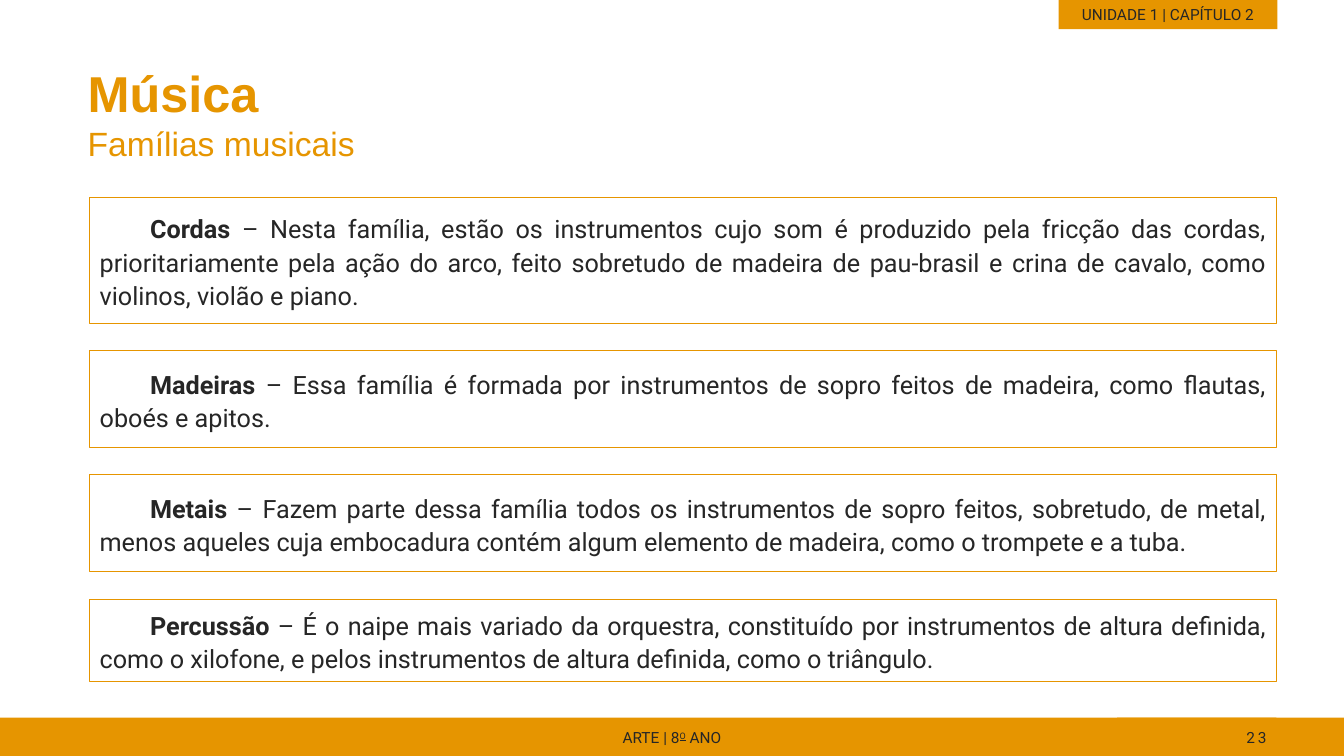
from dataclasses import dataclass

from pptx import Presentation
from pptx.dml.color import RGBColor
from pptx.enum.shapes import MSO_SHAPE
from pptx.enum.text import MSO_ANCHOR as Anchor, PP_ALIGN as Align
from pptx.util import Inches, Pt


@dataclass(frozen=True)
class Theme:
    """Colours, fonts and type sizes of the slide."""
    accent: RGBColor = RGBColor(0xE6, 0x95, 0x00)
    ink: RGBColor = RGBColor(0x26, 0x26, 0x26)
    heading_font: str = "Arial"
    body_font: str = "Roboto"
    title: Pt = Pt(36)
    subtitle: Pt = Pt(24)
    body: Pt = Pt(18)
    label: Pt = Pt(11)
    outline: Pt = Pt(0.75)


THEME = Theme()
LABEL = {"name": THEME.body_font, "size": THEME.label}
BODY = {"name": THEME.body_font, "size": THEME.body}
CARD_LEFT, CARD_WIDTH = 0.89, 11.77

FAMILIES = [
    (1.96, 1.25, "Cordas", "Nesta família, estão os instrumentos cujo som é produzido pela "
     "fricção das cordas, prioritariamente pela ação do arco, feito sobretudo de madeira de "
     "pau-brasil e crina de cavalo, como violinos, violão e piano."),
    (3.48, 0.96, "Madeiras", "Essa família é formada por instrumentos de sopro feitos de "
     "madeira, como flautas, oboés e apitos."),
    (4.71, 0.96, "Metais", "Fazem parte dessa família todos os instrumentos de sopro feitos, "
     "sobretudo, de metal, menos aqueles cuja embocadura contém algum elemento de madeira, "
     "como o trompete e a tuba."),
    (5.95, 0.81, "Percussão", "É o naipe mais variado da orquestra, constituído por "
     "instrumentos de altura definida, como o xilofone, e pelos instrumentos de altura "
     "definida, como o triângulo."),
]


def add_run(paragraph, text, color=THEME.ink, **formats):
    """Append a run with the given font attributes."""
    run = paragraph.add_run()
    run.text = text
    run.font.color.rgb = color
    for name, value in formats.items():
        setattr(run.font, name, value)
    return run


def add_title(slide, title, subtitle):
    """Add the heading with its subtitle on the next line."""
    box = slide.shapes.add_textbox(Inches(0.77), Inches(0.3), Inches(11.05), Inches(1.37))
    frame = box.text_frame
    frame.word_wrap = True
    frame.vertical_anchor = Anchor.BOTTOM
    paragraph = frame.paragraphs[0]
    style = {"name": THEME.heading_font, "color": THEME.accent}
    add_run(paragraph, title, size=THEME.title, bold=True, **style)
    paragraph.add_line_break()
    add_run(paragraph, subtitle, size=THEME.subtitle, bold=False, **style)


def add_box(slide, bounds, align, anchor=Anchor.MIDDLE):
    """Add a plain rectangle and return it with its paragraph."""
    shape = slide.shapes.add_shape(MSO_SHAPE.RECTANGLE, *map(Inches, bounds))
    shape.shadow.inherit = False
    shape.text_frame.word_wrap = True
    shape.text_frame.vertical_anchor = anchor
    paragraph = shape.text_frame.paragraphs[0]
    paragraph.alignment = align
    return shape, paragraph


def add_band(slide, bounds, align=Align.CENTER, anchor=Anchor.MIDDLE):
    """Add a filled band without outline and return its paragraph."""
    shape, paragraph = add_box(slide, bounds, align, anchor)
    shape.fill.solid()
    shape.fill.fore_color.rgb = THEME.accent
    shape.line.fill.background()
    return paragraph


def add_family(slide, top, height, name, description):
    """Add an outlined card describing one family of instruments."""
    shape, paragraph = add_box(slide, (CARD_LEFT, top, CARD_WIDTH, height), Align.JUSTIFY)
    shape.fill.background()
    shape.line.color.rgb = THEME.accent
    shape.line.width = THEME.outline
    paragraph.line_spacing = 1.1
    properties = paragraph._p.get_or_add_pPr()
    properties.set("marL", "0")
    properties.set("indent", str(Inches(0.5)))
    add_run(paragraph, name, bold=True, **BODY)
    add_run(paragraph, f" – {description}", bold=False, **BODY)


def add_footer(slide):
    """Add the footer band with the school year and the page number."""
    footer = add_band(slide, (0, 7.12, 13.33, 0.4))
    add_run(footer, "ARTE | 8", **LABEL)
    ordinal = add_run(footer, "O", underline=True, **LABEL)
    ordinal.font._element.set("baseline", "30000")
    add_run(footer, " ANO", **LABEL)
    number = add_run(add_band(slide, (11.08, 7.12, 1.58, 0.4), Align.RIGHT), "23", **LABEL)
    number.font._element.set("spc", "200")


def main():
    """Build the slide and save it."""
    presentation = Presentation()
    presentation.slide_width = Inches(13.33)
    presentation.slide_height = Inches(7.5)
    slide = presentation.slides.add_slide(presentation.slide_layouts[6])
    add_title(slide, "Música", "Famílias musicais")
    add_footer(slide)
    chapter = add_band(slide, (10.5, 0, 2.17, 0.29), anchor=Anchor.TOP)
    add_run(chapter, "UNIDADE 1 | CAPÍTULO 2", **LABEL)
    for family in FAMILIES:
        add_family(slide, *family)
    presentation.save("out.pptx")


if __name__ == "__main__":
    main()
